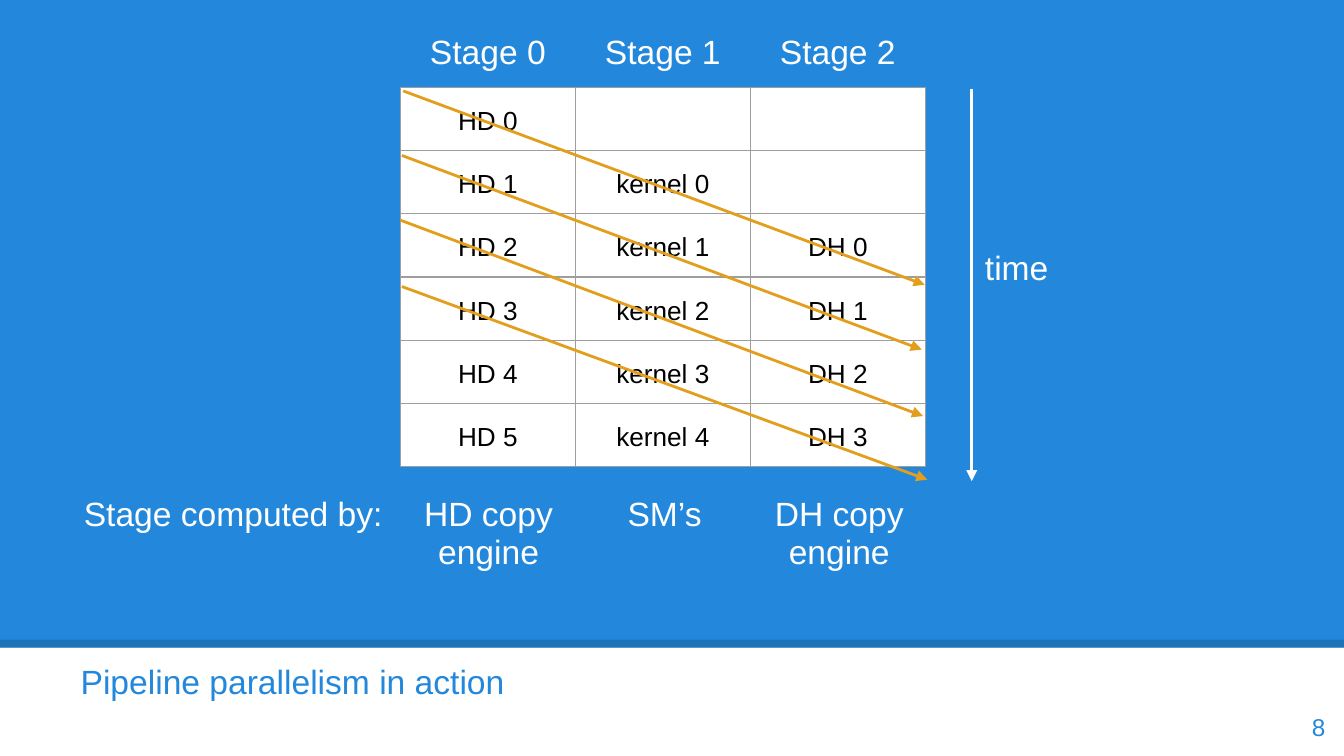
from dataclasses import dataclass
from typing import NamedTuple

from lxml import etree
from pptx import Presentation
from pptx.dml.color import RGBColor
from pptx.enum import shapes, text
from pptx.oxml import ns
from pptx.util import Pt


@dataclass(frozen=True)
class Theme:
    font: str = "Arial"
    blue: str = "2388DB"
    white: str = "FFFFFF"
    black: str = "000000"
    grid: str = "9E9E9E"
    orange: str = "E29F1D"
    heading: int = 18
    cell: int = 14
    number: int = 13
    inset: float = 7.2


THEME = Theme()
CENTER = text.PP_ALIGN.CENTER
STAGE_WIDTH = 93.75


class Arrow(NamedTuple):
    x1: float
    y1: float
    x2: float
    y2: float
    color: str


@dataclass(frozen=True)
class Grid:
    left: float
    top: float
    widths: list[float]
    row_height: float
    rows: list[list[str]]
    size: int
    color: str
    spacing: float = 1.0
    fill: str | None = None
    border: str | None = None


@dataclass(frozen=True)
class Label:
    words: str
    left: float
    top: float
    width: float
    height: float
    size: int
    color: str
    align: text.PP_ALIGN = text.PP_ALIGN.LEFT
    anchor: text.MSO_ANCHOR = text.MSO_ANCHOR.TOP


def rgb(color: str) -> RGBColor:
    return RGBColor.from_string(color)


def add_child(parent, tag: str, **attributes: str):
    return etree.SubElement(parent, ns.qn(tag), attributes)


def write(paragraph, words: str, size: int, color: str, align) -> None:
    paragraph.alignment = align
    run = paragraph.add_run()
    run.text = words
    run.font.name = THEME.font
    run.font.size = Pt(size)
    run.font.color.rgb = rgb(color)


def set_insets(area) -> None:
    area.margin_left = area.margin_right = Pt(THEME.inset)
    area.margin_top = area.margin_bottom = Pt(THEME.inset)


def fill_label(shape, label: Label) -> None:
    shape.left, shape.top = Pt(label.left), Pt(label.top)
    shape.width, shape.height = Pt(label.width), Pt(label.height)
    frame = shape.text_frame
    frame.word_wrap = True
    frame.auto_size = text.MSO_AUTO_SIZE.NONE
    frame.vertical_anchor = label.anchor
    set_insets(frame)
    write(frame.paragraphs[0], label.words, label.size, label.color, label.align)


def add_label(slide, label: Label) -> None:
    fill_label(slide.shapes.add_textbox(0, 0, 0, 0), label)


def set_borders(cell, color: str | None) -> None:
    properties = cell._tc.get_or_add_tcPr()
    for side in ("a:lnL", "a:lnR", "a:lnT", "a:lnB"):
        edge = add_child(properties, side, w=str(Pt(0.75)))
        if color:
            add_child(add_child(edge, "a:solidFill"), "a:srgbClr", val=color)
        else:
            add_child(edge, "a:noFill")


def fill_cell(cell, words: str, grid: Grid) -> None:
    set_borders(cell, grid.border)
    if grid.fill:
        cell.fill.solid()
        cell.fill.fore_color.rgb = rgb(grid.fill)
    else:
        cell.fill.background()
    set_insets(cell)
    paragraph = cell.text_frame.paragraphs[0]
    paragraph.line_spacing = grid.spacing
    if words:
        write(paragraph, words, grid.size, grid.color, CENTER)
    else:
        add_child(paragraph._p, "a:endParaRPr", sz=str(grid.size * 100))


def add_grid(slide, grid: Grid) -> None:
    table = slide.shapes.add_table(
        len(grid.rows), len(grid.widths), Pt(grid.left), Pt(grid.top),
        Pt(sum(grid.widths)), Pt(grid.row_height * len(grid.rows))).table
    table.first_row = table.horz_banding = False
    for column, width in zip(table.columns, grid.widths):
        column.width = Pt(width)
    for row, values in zip(table.rows, grid.rows):
        row.height = Pt(grid.row_height)
        for cell, words in zip(row.cells, values):
            fill_cell(cell, words, grid)


def add_line(slide, ends: Arrow, width: float):
    line = slide.shapes.add_connector(
        shapes.MSO_CONNECTOR.STRAIGHT,
        Pt(ends.x1), Pt(ends.y1), Pt(ends.x2), Pt(ends.y2))
    line.line.width = Pt(width)
    line.line.color.rgb = rgb(ends.color)
    add_child(line._element.spPr, "a:effectLst")
    return line


def add_arrow(slide, arrow: Arrow) -> None:
    line = add_line(slide, arrow, 1.5)
    add_child(line.line._get_or_add_ln(), "a:tailEnd", type="triangle")


def add_backdrop(slide) -> None:
    panel = slide.shapes.add_shape(
        shapes.MSO_SHAPE.RECTANGLE, 0, 0, Pt(720), Pt(347))
    panel.shadow.inherit = False
    panel.fill.solid()
    panel.fill.fore_color.rgb = rgb(THEME.blue)
    panel.line.fill.background()
    edge = add_line(slide, Arrow(0, 344.9, 720, 344.9, THEME.black), 4.5)
    shade = edge.line._get_or_add_ln().find(".//" + ns.qn("a:srgbClr"))
    add_child(shade, "a:alpha", val="15000")


def main() -> None:
    deck = Presentation()
    deck.slide_width, deck.slide_height = Pt(720), Pt(405)
    slide = deck.slides.add_slide(deck.slide_layouts[5])
    add_backdrop(slide)

    stages = [("HD", 0), ("kernel", 1), ("DH", 2)]
    schedule = [[f"{task} {step - delay}" if step >= delay else ""
                 for task, delay in stages] for step in range(6)]
    add_grid(slide, Grid(214.5, 46.8, [STAGE_WIDTH] * 3, 33.9, schedule,
                         THEME.cell, THEME.black, 1.2, THEME.white, THEME.grid))
    engines = ["Stage computed by:", "HD copy engine", "SM’s", "DH copy engine"]
    add_grid(slide, Grid(35.3, 258.5, [179.3, 94.3, 94.3, 92.9], 58, [engines],
                         THEME.heading, THEME.white))
    add_grid(slide, Grid(214.5, 10.8, [STAGE_WIDTH] * 3, 35,
                         [[f"Stage {delay}" for _, delay in stages]],
                         THEME.heading, THEME.white))

    fill_label(slide.shapes.title, Label(
        "Pipeline parallelism in action", 36, 347, 648, 41,
        THEME.heading, THEME.blue))
    for arrow in (
        Arrow(216, 48.7, 495.4, 152.6, THEME.orange),
        Arrow(215.3, 83.3, 493.8, 187.3, THEME.orange),
        Arrow(214.6, 118, 494.5, 222.9, THEME.orange),
        Arrow(215.3, 153.5, 496.8, 257, THEME.orange),
        Arrow(520.6, 47.6, 520.6, 257.8, THEME.white),
    ):
        add_arrow(slide, arrow)
    add_label(slide, Label("time", 520.6, 125.3, 105, 41,
                           THEME.heading, THEME.white))
    add_label(slide, Label("8", 673.9, 373.7, 43.2, 31, THEME.number, THEME.blue,
                           text.PP_ALIGN.RIGHT, text.MSO_ANCHOR.MIDDLE))
    deck.save("out.pptx")


if __name__ == "__main__":
    main()
